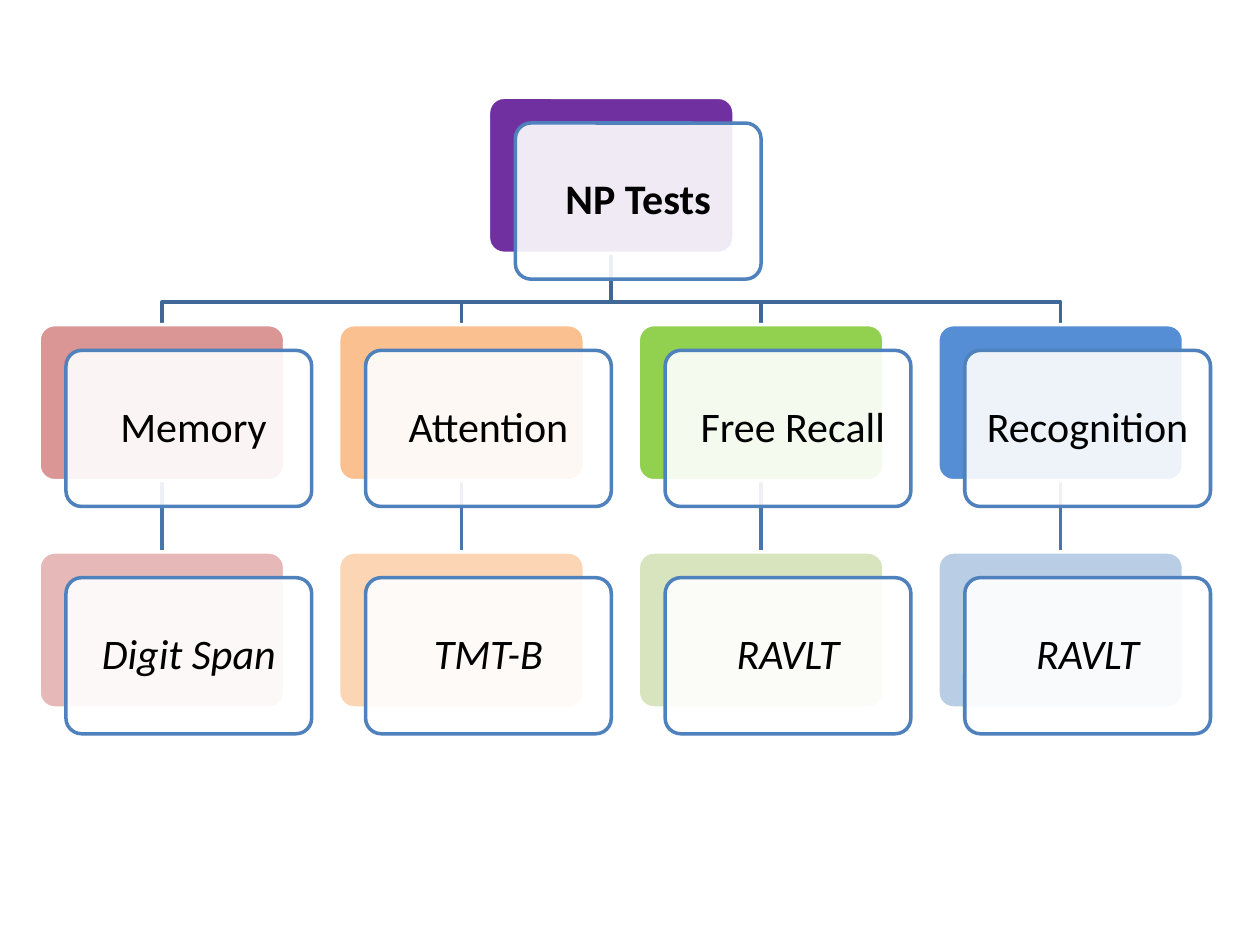
from dataclasses import dataclass

from pptx import Presentation
from pptx.dml.color import RGBColor
from pptx.enum import shapes, text
from pptx.oxml import xmlchemy as xml
from pptx.util import Pt


@dataclass(frozen=True)
class Theme:
    """Colours and type of the chart."""
    font: str = "Calibri"
    size: float = 24
    ink: str = "000000"
    paper: str = "FFFFFF"
    edge: str = "4F81BD"
    root: str = "7030A0"
    trunk: str = "3F6797"
    stem: str = "4875AC"
    line: float = 2


@dataclass(frozen=True)
class Box:
    """A region in points."""
    x: float
    y: float
    w: float
    h: float

    @property
    def mid(self):
        """Horizontal centre."""
        return self.x + self.w / 2

    @property
    def base(self):
        """Bottom edge."""
        return self.y + self.h

    def shift(self, dx, dy):
        """Same size, moved."""
        return Box(self.x + dx, self.y + dy, self.w, self.h)


THEME = Theme()
CARD = Box(22.3, 55.6, 140.4, 89.2)
COL, ROW = 171.2, 129.9
BEND = 27.8
TESTS = [
    (" Memory", "D99694", "Digit Span", "E6B9B8"),
    ("Attention", "FAC090", "TMT-B", "FCD5B5"),
    (" Free Recall", "92D050", "RAVLT", "D7E4BD"),
    ("Recognition", "558ED5", "RAVLT", "B9CDE5"),
]


def rgb(code):
    """Colour from its hex code."""
    return RGBColor.from_string(code)


def stroke(shape, color):
    """Set the outline of a shape or connector."""
    shape.line.color.rgb = rgb(color)
    shape.line.width = Pt(THEME.line)


def panel(slide, box, fill, edge):
    """Add one rounded panel."""
    shape = slide.shapes.add_shape(
        shapes.MSO_SHAPE.ROUNDED_RECTANGLE,
        Pt(box.x), Pt(box.y), Pt(box.w), Pt(box.h))
    shape.adjustments[0] = 0.1
    shape.shadow.inherit = False
    shape.fill.solid()
    shape.fill.fore_color.rgb = rgb(fill)
    stroke(shape, edge)
    return shape


def card(slide, box, label, fill, bold=False, italic=False):
    """Add a coloured panel with a clear labelled panel over it."""
    panel(slide, box, fill, THEME.paper)
    front = panel(slide, box.shift(15.4, 14.7), THEME.paper, THEME.edge)
    tint = front.fill.fore_color._xFill.find(".//" + xml.qn("a:srgbClr"))
    alpha = xml.OxmlElement("a:alpha")
    alpha.set("val", "90000")
    tint.append(alpha)

    frame = front.text_frame
    frame.word_wrap = True
    frame.vertical_anchor = text.MSO_ANCHOR.MIDDLE
    for side in ("left", "right", "top", "bottom"):
        setattr(frame, "margin_" + side, Pt(7.2))
    frame.text = label
    para = frame.paragraphs[0]
    para.alignment = text.PP_ALIGN.CENTER
    para.line_spacing = 0.9
    para.space_after = Pt(0.35 * THEME.size)
    font = para.runs[0].font
    font.name, font.size = THEME.font, Pt(THEME.size)
    font.bold, font.italic = bold, italic
    font.color.rgb = rgb(THEME.ink)


def branch(slide, top, low):
    """Join the root to a group with a bent line."""
    turn = top.base + BEND
    path = slide.shapes.build_freeform(Pt(top.mid), Pt(top.base))
    path.add_line_segments(
        [(Pt(x), Pt(y)) for x, y in
         ((top.mid, turn), (low.mid, turn), (low.mid, low.y))],
        close=False)
    shape = path.convert_to_shape()
    shape.shadow.inherit = False
    shape.fill.background()
    stroke(shape, THEME.trunk)


def stem(slide, top, low):
    """Join a group to its test with a straight line."""
    line = slide.shapes.add_connector(
        shapes.MSO_CONNECTOR.STRAIGHT,
        Pt(top.mid), Pt(top.base), Pt(low.mid), Pt(low.y))
    line._element.spPr.append(xml.OxmlElement("a:effectLst"))
    stroke(line, THEME.stem)


def tree(slide, box):
    """Place the whole chart, with box as the card above the first column."""
    root = box.shift(COL * (len(TESTS) - 1) / 2, 0)
    groups = [box.shift(i * COL, ROW) for i in range(len(TESTS))]
    leaves = [group.shift(0, ROW) for group in groups]
    for group, leaf in zip(groups, leaves):
        stem(slide, group, leaf)
        branch(slide, root, group)
    card(slide, root, "NP Tests", THEME.root, bold=True)
    for group, leaf, (name, fill, test, pale) in zip(groups, leaves, TESTS):
        card(slide, group, name, fill)
        card(slide, leaf, test, pale, italic=True)


def main():
    """Build and save the slide."""
    deck = Presentation()
    deck.slide_width, deck.slide_height = Pt(720), Pt(540)
    tree(deck.slides.add_slide(deck.slide_layouts[6]), CARD)
    deck.save("out.pptx")


if __name__ == "__main__":
    main()
